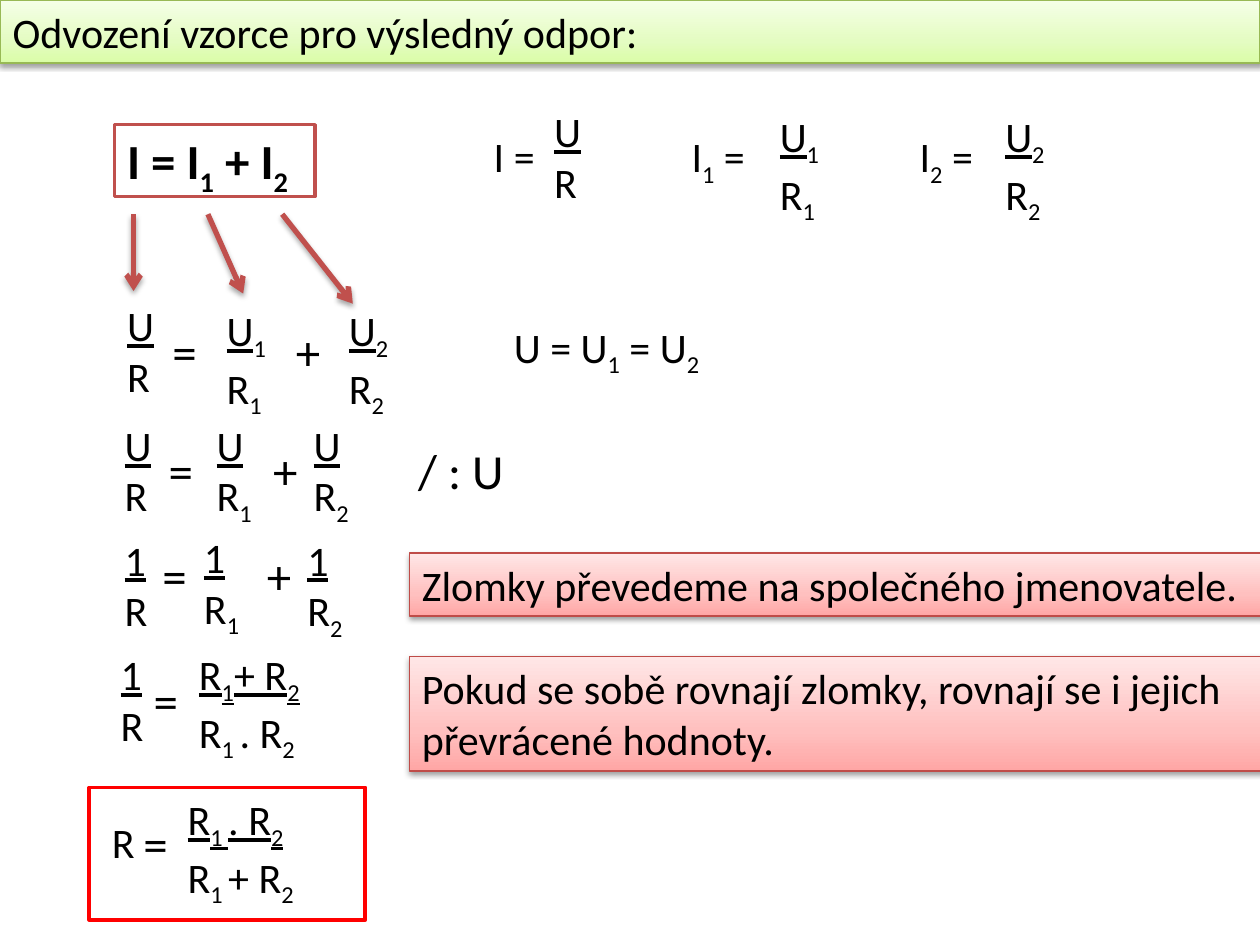
from lxml import etree
from pptx import Presentation
from pptx.dml.color import RGBColor
from pptx.enum.shapes import MSO_CONNECTOR as CONNECTOR, MSO_SHAPE as SHAPE
from pptx.enum.text import MSO_ANCHOR as ANCHOR, PP_ALIGN as ALIGN
from pptx.oxml import parse_xml
from pptx.oxml.ns import nsdecls, qn
from pptx.util import Inches, Pt

COLORS = {
    "text": "000000", "paper": "FFFFFF", "accent": "C0504D", "result": "FF0000",
    "green_line": "98B955", "pink_line": "BF4C48",
}
GREENS = ["DAFDA7", "E4FCC2", "F5FFE7"]
PINKS = ["FFA6A5", "FFC0BF", "FFE7E7"]


def write(box, lines, size=24, bold=False, fraction=False):
    frame = box.text_frame
    frame.word_wrap = True
    frame.vertical_anchor = ANCHOR.TOP
    for index, line in enumerate(lines):
        para = frame.paragraphs[0] if index == 0 else frame.add_paragraph()
        para.alignment = ALIGN.LEFT
        parts = line.split("|")
        for order, part in enumerate(parts):
            span = para.add_run()
            span.text = part
            span.font.name = "Calibri"
            span.font.size = Pt(size)
            span.font.bold = bold
            span.font.color.rgb = RGBColor.from_string(COLORS["text"])
            subscript = order % 2 == 1
            if subscript:
                span._r.get_or_add_rPr().set("baseline", "-25000")
            if fraction and index == 0:
                span.font.underline = not subscript or len(parts) > 2


def decorate(shape, line, width, shadow=None, gradient=None):
    if gradient:
        shape.fill.gradient()
        shape.fill.gradient_angle = 90
        stops = shape._element.spPr.find(qn("a:gradFill")).find(qn("a:gsLst"))
        for stop in list(stops):
            stops.remove(stop)
        for position, color in zip((0, 35000, 100000), gradient):
            stops.append(parse_xml(
                f'<a:gs {nsdecls("a")} pos="{position}"><a:srgbClr val="{color}"/></a:gs>'))
    shape.line.color.rgb = RGBColor.from_string(COLORS[line])
    shape.line.width = Pt(width)
    if shadow:
        alpha, distance = shadow
        shape._element.spPr.append(parse_xml(
            f'<a:effectLst {nsdecls("a")}><a:outerShdw blurRad="{Pt(3.1)}" '
            f'dist="{Pt(distance)}" dir="5400000" rotWithShape="0"><a:srgbClr val="000000">'
            f'<a:alpha val="{alpha}000"/></a:srgbClr></a:outerShdw></a:effectLst>'))


deck = Presentation()
deck.slide_width, deck.slide_height = Inches(10), Inches(7.5)
page = deck.slides.add_slide(deck.slide_layouts[5])
shapes = page.shapes

title = shapes.title
title.left, title.top, title.width, title.height = 0, 0, Inches(10), Inches(0.5)
write(title, ["Odvození vzorce pro výsledný odpor:"])
decorate(title, "green_line", 0.75, (38, 1.6), GREENS)

law = shapes.add_shape(SHAPE.RECTANGLE, Inches(0.91), Inches(0.99), Inches(1.59), Inches(0.57))
law.shadow.inherit = False
law.fill.solid()
law.fill.fore_color.rgb = RGBColor.from_string(COLORS["paper"])
decorate(law, "accent", 2)
write(law, ["I = I|1| + I|2"], 28, bold=True)
law.text_frame.word_wrap = False

fractions = [
    (4.3, 0.79, 0.55, "U", "R"),
    (6.09, 0.83, 0.55, "U|1", "R|1"),
    (7.88, 0.83, 0.55, "U|2", "R|2"),
    (0.91, 2.33, 0.55, "U", "R"),
    (1.7, 2.37, 0.55, "U|1", "R|1"),
    (2.67, 2.37, 0.55, "U|2", "R|2"),
    (0.89, 3.28, 0.55, "U", "R"),
    (1.62, 3.28, 0.55, "U", "R|1"),
    (2.39, 3.28, 0.55, "U", "R|2"),
    (0.89, 4.19, 0.55, "1", "R"),
    (1.52, 4.17, 0.55, "1", "R|1"),
    (2.34, 4.19, 0.55, "1", "R|2"),
    (0.86, 5.1, 0.55, "1", "R"),
    (1.48, 5.1, 1.42, "R|1|+ R|2", "R|1 |. R|2"),
    (1.39, 6.25, 1.42, "R|1 |. R|2", "R|1 |+ R|2"),
]
for left, top, width, numerator, denominator in fractions:
    box = shapes.add_textbox(Inches(left), Inches(top), Inches(width), Inches(0.91))
    write(box, [numerator, denominator], fraction=True)

terms = [
    (3.82, 0.99, 0.55, "I =", 24),
    (5.39, 0.99, 0.71, "I|1| =", 24),
    (7.2, 0.99, 0.71, "I|2| =", 24),
    (3.98, 2.5, 1.77, "U = U|1| = U|2", 24),
    (0.79, 6.43, 0.55, "R", 24),
    (1.27, 2.5, 0.41, "=", 28),
    (2.25, 2.5, 0.41, "+", 28),
    (1.24, 3.45, 0.41, "=", 28),
    (2.07, 3.45, 0.41, "+", 28),
    (3.22, 3.45, 1.78, "/ : U", 28),
    (1.19, 4.28, 0.41, "=", 28),
    (2.02, 4.28, 0.41, "+", 28),
    (1.12, 5.27, 0.41, "=", 28),
    (1.04, 6.41, 0.41, "=", 28),
]
for left, top, width, term, size in terms:
    height = 0.5 if size == 24 else 0.57
    box = shapes.add_textbox(Inches(left), Inches(top), Inches(width), Inches(height))
    write(box, [term], size)

notes = [
    (4.39, 0.5, "Zlomky převedeme na společného jmenovatele."),
    (5.21, 0.91, "Pokud se sobě rovnají zlomky, rovnají se i jejich převrácené hodnoty."),
]
for top, height, sentence in notes:
    note = shapes.add_shape(
        SHAPE.RECTANGLE, Inches(3.25), Inches(top), Inches(6.78), Inches(height))
    write(note, [sentence])
    decorate(note, "pink_line", 0.75, (38, 1.6), PINKS)

result = shapes.add_shape(SHAPE.RECTANGLE, Inches(0.71), Inches(6.25), Inches(2.19), Inches(1.05))
result.shadow.inherit = False
result.fill.background()
decorate(result, "result", 2.25)

for start, end, bottom in [(1.06, 1.06, 2.31), (1.65, 1.93, 2.33), (2.24, 2.8, 2.41)]:
    arrow = shapes.add_connector(
        CONNECTOR.STRAIGHT, Inches(start), Inches(1.7), Inches(end), Inches(bottom))
    decorate(arrow, "accent", 3, (35, 1.8))
    etree.SubElement(arrow.line._get_or_add_ln(), qn("a:tailEnd"), type="arrow")

deck.save("out.pptx")
